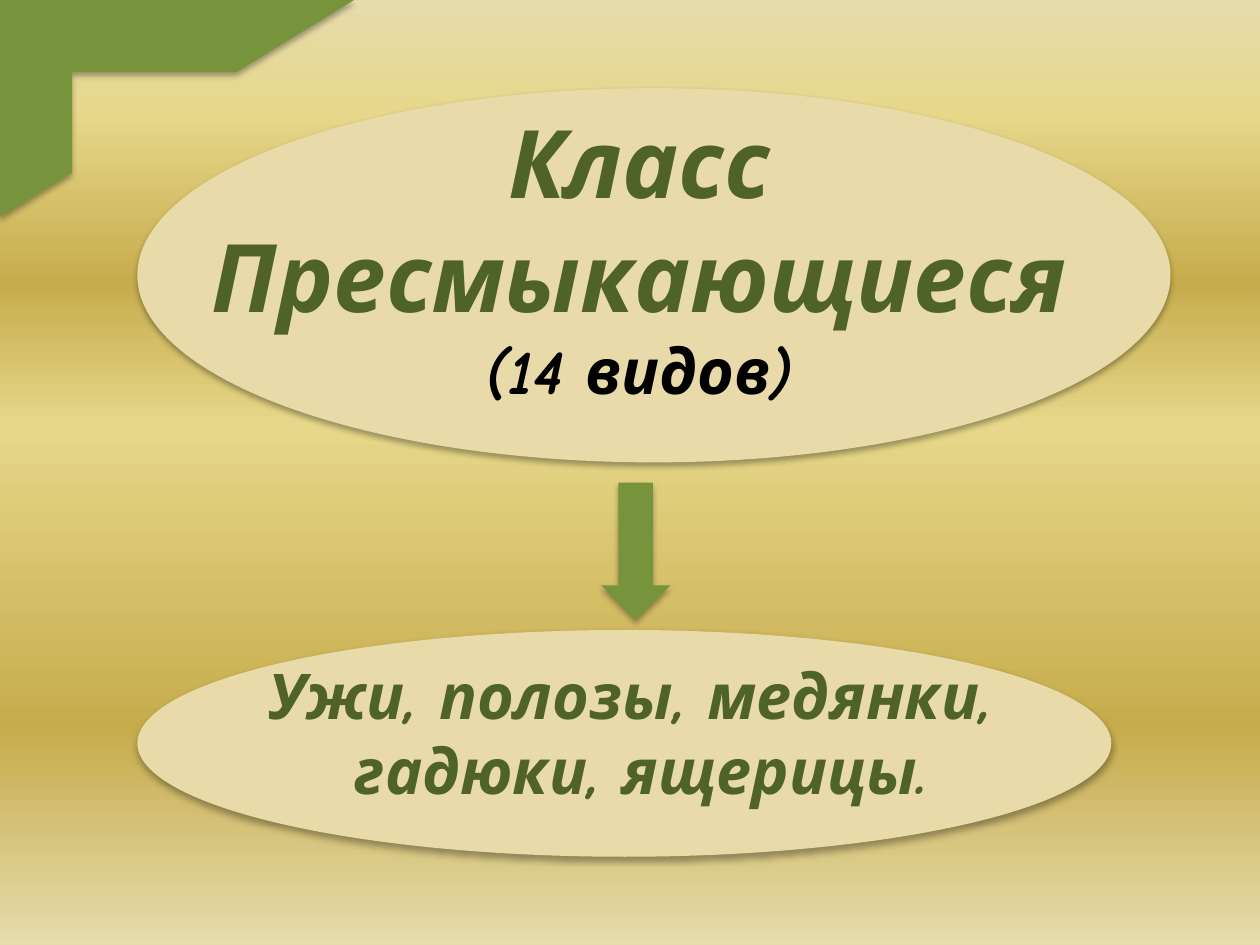
from lxml.etree import SubElement
from pptx import Presentation
from pptx.dml.color import RGBColor
from pptx.enum.shapes import MSO_SHAPE
from pptx.enum.text import MSO_AUTO_SIZE, PP_ALIGN
from pptx.oxml.ns import qn
from pptx.util import Inches, Pt

COLORS = {
    "pale": "E6DCAC", "light": "E6D78A", "gold": "C7AC4C",
    "sand": "E9DBA9", "green": "77933C", "dark green": "4F6228",
    "black": "000000",
}


def add_shadowed_shape(page, kind, place, color):
    shape = page.shapes.add_shape(kind, *[Inches(n) for n in place])
    shape.fill.solid()
    shape.fill.fore_color.rgb = RGBColor.from_string(COLORS[color])
    shape.line.fill.background()
    shape.shadow.inherit = False
    effects = shape._element.spPr.find(qn("a:effectLst"))
    shadow = SubElement(effects, qn("a:outerShdw"), blurRad=str(Pt(3.5)),
                        dist=str(Pt(2.2)), dir="5400000", rotWithShape="0")
    shade = SubElement(shadow, qn("a:srgbClr"), val=COLORS["black"])
    SubElement(shade, qn("a:alpha"), val="32000")


def add_text(page, place, lines, wrap):
    box = page.shapes.add_textbox(*[Inches(n) for n in place])
    frame = box.text_frame
    frame.word_wrap = wrap
    frame.auto_size = MSO_AUTO_SIZE.SHAPE_TO_FIT_TEXT
    for index, (text, size, color) in enumerate(lines):
        para = frame.add_paragraph() if index else frame.paragraphs[0]
        para.text = text
        para.alignment = PP_ALIGN.CENTER
        para.font.name = "Comic Neue"
        para.font.size = Pt(size)
        para.font.bold = para.font.italic = True
        para.font.color.rgb = RGBColor.from_string(COLORS[color])


deck = Presentation()
deck.slide_width, deck.slide_height = Inches(10), Inches(7.5)
page = deck.slides.add_slide(deck.slide_layouts[6])

# Background: gold bands from top to bottom
fill = page.background.fill
fill.gradient()
fill.gradient_angle = 270
stops = next(page._element.iter(qn("a:gsLst")))
for stop in list(stops):
    stops.remove(stop)
for percent, color in [(0, "pale"), (12, "light"), (30, "gold"),
                       (45, "light"), (77, "gold"), (100, "pale")]:
    stop = SubElement(stops, qn("a:gs"), pos=str(percent * 1000))
    SubElement(stop, qn("a:srgbClr"), val=COLORS[color])

# Ovals for the species and the class
add_shadowed_shape(page, MSO_SHAPE.OVAL, (1.09, 5, 7.73, 1.8), "sand")
add_shadowed_shape(page, MSO_SHAPE.OVAL, (1.09, 0.7, 8.2, 2.97), "sand")

# Wording
add_text(page, (1.48, 0.78, 7.19, 2.52), [
    ("Класс", 54, "dark green"),
    ("Пресмыкающиеся", 54, "dark green"),
    ("(14 видов)", 36, "black"),
], wrap=True)
add_text(page, (1.87, 5.16, 6.44, 1.31), [
    ("Ужи, полозы, медянки, ", 36, "dark green"),
    ("гадюки, ящерицы.", 36, "dark green"),
], wrap=False)

# Corner frame and arrow
add_shadowed_shape(page, MSO_SHAPE.HALF_FRAME, (0, 0, 2.81, 1.72), "green")
add_shadowed_shape(page, MSO_SHAPE.DOWN_ARROW, (4.77, 3.83, 0.55, 1.09), "green")

deck.save("out.pptx")
